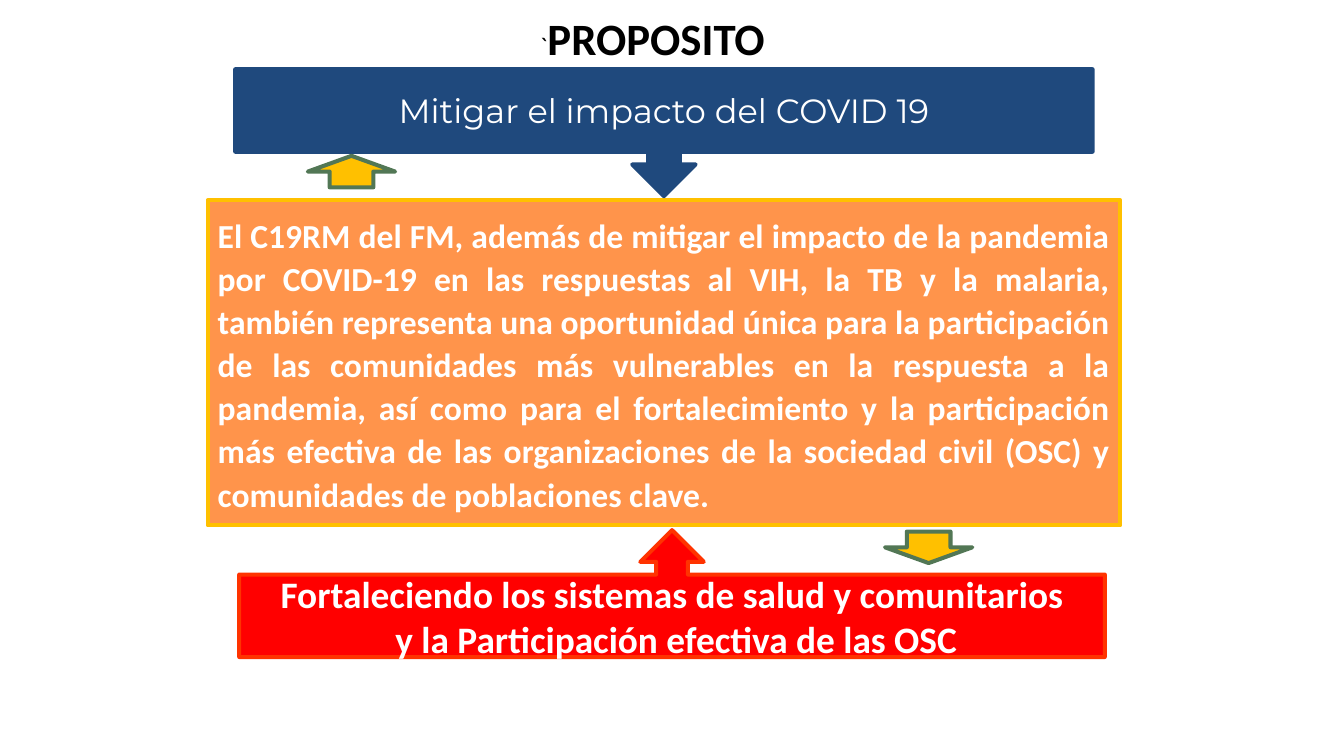
"""Build the purpose slide: two callouts around a central statement."""
from pptx import Presentation
from pptx.dml.color import RGBColor
from pptx.enum import shapes, text
from pptx.util import Pt

WHITE = RGBColor(0xFF, 0xFF, 0xFF)
BLACK = RGBColor(0x00, 0x00, 0x00)
ORANGE = RGBColor(0xFF, 0x94, 0x4B)
GOLD = RGBColor(0xFF, 0xC0, 0x00)
NAVY = RGBColor(0x1F, 0x49, 0x7D)
RED = RGBColor(0xFF, 0x00, 0x00)
SCARLET = RGBColor(0xFF, 0x33, 0x00)
GREEN = RGBColor(0x52, 0x77, 0x55)

MSO = shapes.MSO_SHAPE
ALIGN = text.PP_ALIGN
STATEMENT = (
    "El C19RM del FM, además de mitigar el impacto de la pandemia por COVID-19 "
    "en las respuestas al VIH, la TB y la malaria, también representa una "
    "oportunidad única para la participación de las comunidades más vulnerables "
    "en la respuesta a la pandemia, así como para el fortalecimiento y la "
    "participación más efectiva de las organizaciones de la sociedad civil (OSC) "
    "y comunidades de poblaciones clave."
)

prs = Presentation()
prs.slide_width, prs.slide_height = Pt(1440), Pt(810)
s = prs.slides.add_slide(prs.slide_layouts[6])


def add_block(kind, box, fill, line, adjustments=()):
    sp = s.shapes.add_shape(kind, *[Pt(v) for v in box])
    sp.shadow.inherit = False
    sp.fill.solid()
    sp.fill.fore_color.rgb = fill
    sp.line.color.rgb = line
    sp.line.width = Pt(4.34)
    for i, value in enumerate(adjustments):
        sp.adjustments[i] = value
    return sp


def style_run(r, size, font, color, bold):
    r.font.size = Pt(size)
    r.font.name = font
    r.font.color.rgb = color
    r.font.bold = bold


callout = (0.25, 0.25, 0.25, 0.65)
blocks = [
    (MSO.RECTANGLE, (222.5, 214.5, 977.8, 348.5), ORANGE, GOLD, (),
     STATEMENT, 36, "Calibri", True, ALIGN.JUSTIFY),
    (MSO.DOWN_ARROW_CALLOUT, (252, 74.2, 918.7, 136), NAVY, NAVY, callout,
     "Mitigar el impacto del COVID 19", 36, "Montserrat", False, ALIGN.CENTER),
    (MSO.UP_ARROW_CALLOUT, (256.3, 568, 927.4, 136), RED, SCARLET, callout,
     "Fortaleciendo los sistemas de salud y comunitarios\n"
     " y la Participación efectiva de las OSC", 40, "Calibri", True, ALIGN.CENTER),
]
for kind, box, fill, line, adjustments, words, size, font, bold, align in blocks:
    sp = add_block(kind, box, fill, line, adjustments)
    tf = sp.text_frame
    tf.word_wrap = True
    tf.vertical_anchor = text.MSO_ANCHOR.MIDDLE
    tf.margin_left = tf.margin_right = Pt(10.8)
    tf.margin_top = tf.margin_bottom = Pt(5.4)
    tf.text = words
    for p in tf.paragraphs:
        p.alignment = align
        if align == ALIGN.JUSTIFY:
            p.line_spacing = 1.07
            p.space_after = Pt(12)
        for r in p.runs:
            style_run(r, size, font, WHITE, bold)

for left, top, rotation in [(329.8, 167, 0), (948.2, 569.5, 180)]:
    sp = add_block(MSO.UP_ARROW, (left, top, 93.6, 33.8), GOLD, GREEN)
    sp.rotation = rotation

title = s.shapes.add_textbox(Pt(473.8), Pt(7.9), Pt(450.7), Pt(65.5))
tf = title.text_frame
tf.word_wrap = True
tf.auto_size = text.MSO_AUTO_SIZE.SHAPE_TO_FIT_TEXT
p = tf.paragraphs[0]
p.alignment = ALIGN.CENTER
for words, size, bold in [("`", 27, False), ("PROPOSITO", 48, True)]:
    r = p.add_run()
    r.text = words
    style_run(r, size, "Calibri", BLACK, bold)

prs.save("out.pptx")
